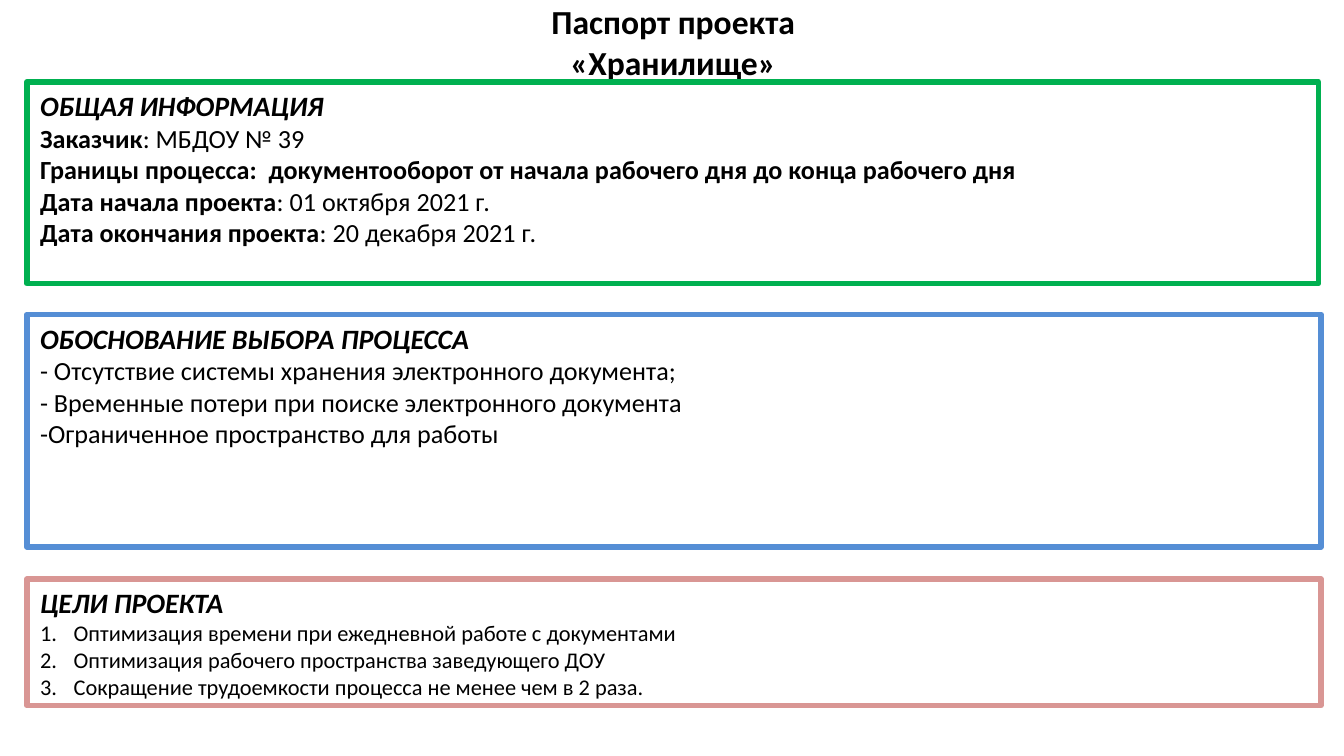
from lxml.etree import SubElement
from pptx import Presentation
from pptx.dml.color import RGBColor
from pptx.enum.shapes import MSO_SHAPE
from pptx.enum.text import MSO_ANCHOR, MSO_AUTO_SIZE, PP_ALIGN
from pptx.oxml.ns import qn
from pptx.util import Pt

COLORS = {
    "text": "000000",
    "information": "00B050",
    "reasons": "558ED5",
    "goals": "D99694",
}
FONT = "Calibri"
LEFT = 14.4
INDENT = 18

# A line is a list of (text, bold) spans.
INFORMATION = [
    [("Заказчик", True), (": МБДОУ № 39", False)],
    [("Границы процесса:  документооборот от начала рабочего дня до конца рабочего дня", True)],
    [("Дата начала проекта", True), (": 01 октября 2021 г.", False)],
    [("Дата окончания проекта", True), (": 20 декабря 2021 г.", False)],
]
REASONS = [
    [("- Отсутствие системы хранения электронного документа;", False)],
    [("- Временные потери при поиске электронного документа", False)],
    [("-Ограниченное пространство для работы", False)],
]
GOALS = [
    [("Оптимизация времени при ежедневной работе с документами", False)],
    [("Оптимизация рабочего пространства заведующего ДОУ", False)],
    [("Сокращение трудоемкости процесса не менее чем в 2 раза.", False)],
]


def color(name):
    return RGBColor.from_string(COLORS[name])


def set_font(font, size, bold=None, italic=None):
    font.name = FONT
    font.size = Pt(size)
    font.bold = bold
    font.italic = italic
    font.color.rgb = color("text")


def place(shape, box):
    shape.left, shape.top, shape.width, shape.height = (Pt(length) for length in box)


def number(para):
    """Give the paragraph an automatic number with a hanging indent."""
    properties = para._p.get_or_add_pPr()
    properties.set("marL", str(Pt(INDENT)))
    properties.set("indent", str(-Pt(INDENT)))
    SubElement(properties, qn("a:buFont"), typeface="+mj-lt")
    SubElement(properties, qn("a:buAutoNum"), type="arabicPeriod")


def add_title(page, box, text):
    title = page.shapes.title
    place(title, box)
    frame = title.text_frame
    frame.text = text
    frame.auto_size = MSO_AUTO_SIZE.NONE
    frame.vertical_anchor = MSO_ANCHOR.MIDDLE
    para = frame.paragraphs[0]
    para.alignment = PP_ALIGN.CENTER
    set_font(para.font, 18, bold=True)


def add_section(page, box, outline, heading, lines, size=14, numbered=False):
    left, top, width, height = (Pt(length) for length in box)
    section = page.shapes.add_shape(MSO_SHAPE.RECTANGLE, left, top, width, height)
    section.shadow.inherit = False
    section.fill.background()
    section.line.color.rgb = color(outline)
    section.line.width = Pt(3)

    frame = section.text_frame
    frame.word_wrap = True
    frame.vertical_anchor = MSO_ANCHOR.TOP
    para = frame.paragraphs[0]
    para.text = heading
    para.alignment = PP_ALIGN.LEFT
    set_font(para.font, 15, bold=True, italic=True)

    for line in lines:
        para = frame.add_paragraph()
        para.alignment = PP_ALIGN.LEFT
        set_font(para.font, size)
        if numbered:
            number(para)
        for text, bold in line:
            span = para.add_run()
            span.text = text
            span.font.bold = bold


def add_passport(deck):
    page = deck.slides.add_slide(deck.slide_layouts[5])
    add_title(page, (36.72, 0, 648, 44.64), "Паспорт проекта\v«Хранилище»")
    add_section(page, (LEFT, 43.92, 691.92, 108), "information",
                "ОБЩАЯ ИНФОРМАЦИЯ", INFORMATION)
    add_section(page, (LEFT, 168.48, 693.36, 124.56), "reasons",
                "ОБОСНОВАНИЕ ВЫБОРА ПРОЦЕССА", REASONS)
    add_section(page, (LEFT, 310.32, 693.36, 67.68), "goals",
                "ЦЕЛИ ПРОЕКТА", GOALS, size=12, numbered=True)


def main():
    deck = Presentation()
    deck.slide_width, deck.slide_height = Pt(720), Pt(405)
    add_passport(deck)
    deck.save("out.pptx")


if __name__ == "__main__":
    main()
